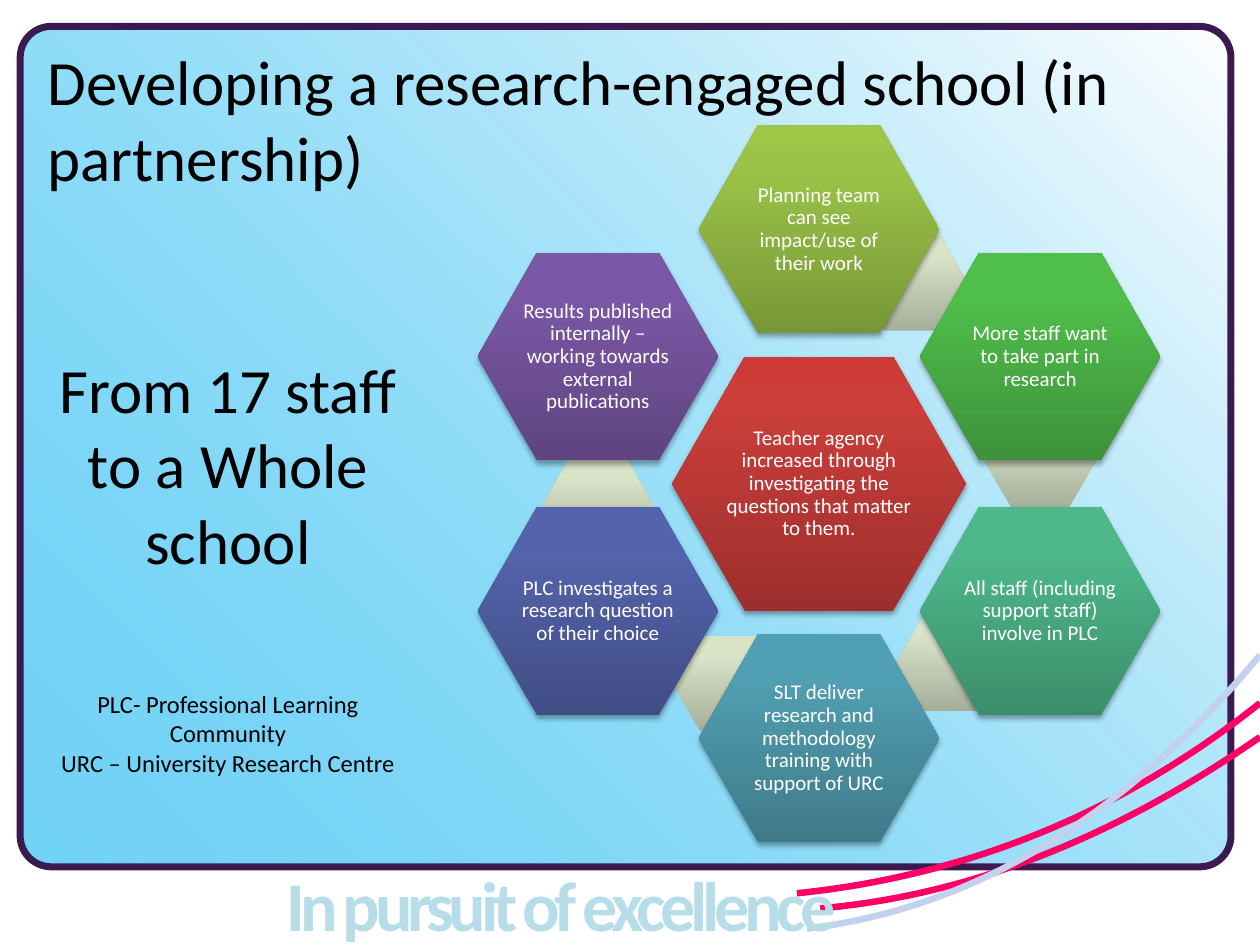
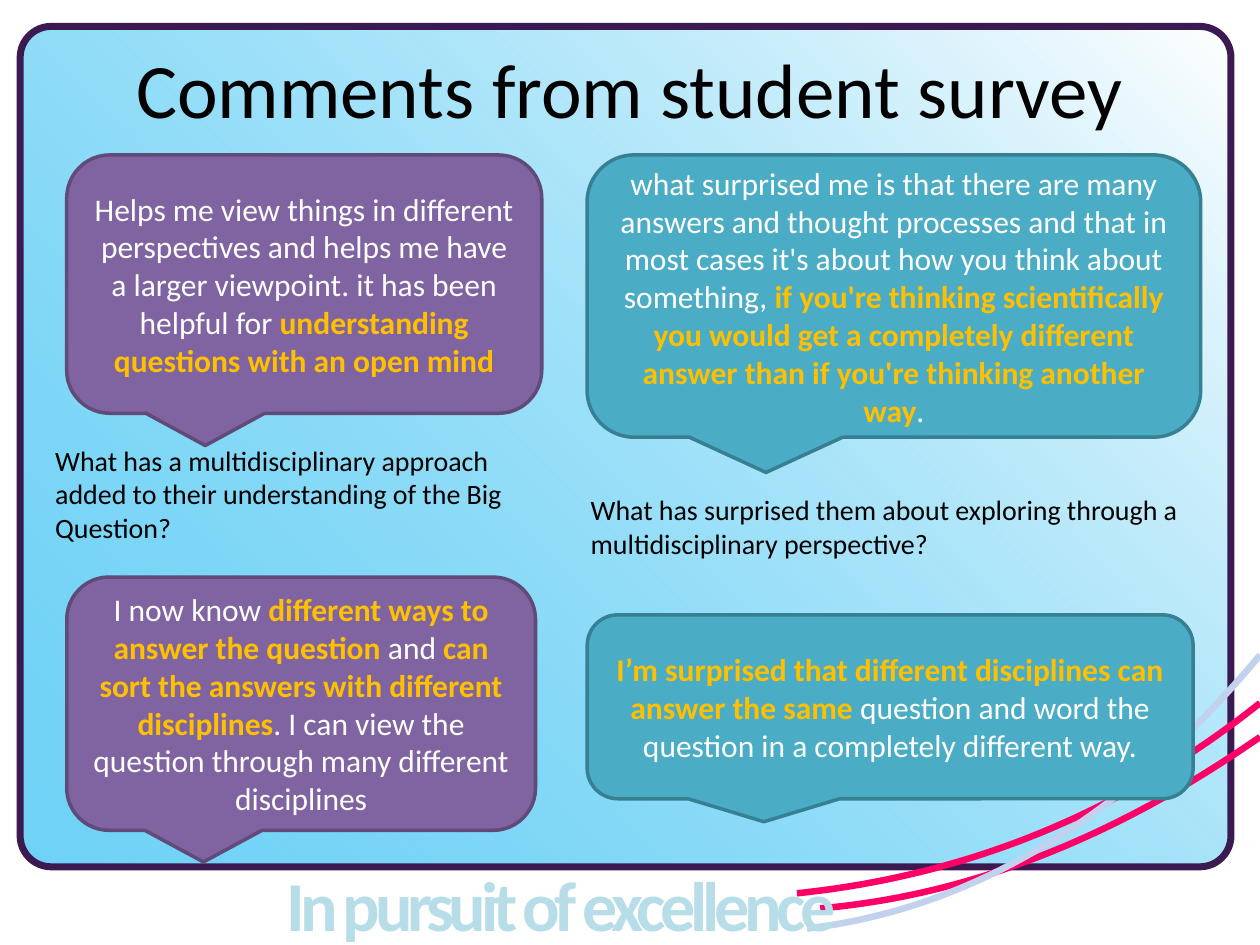
from dataclasses import dataclass

from pptx import Presentation
from pptx.dml.color import RGBColor
from pptx.enum.shapes import MSO_SHAPE
from pptx.enum.text import MSO_ANCHOR, PP_ALIGN
from pptx.oxml import parse_xml
from pptx.oxml.ns import nsdecls, qn
from pptx.presentation import Presentation as Deck
from pptx.shapes.autoshape import Shape
from pptx.slide import Slide
from pptx.util import Emu, Inches, Pt


@dataclass(frozen=True)
class Theme:
    font: str = "Calibri"
    ink: str = "000000"
    paper: str = "FFFFFF"
    highlight: str = "FFC000"
    sky: str = "00B0F0"
    frame: str = "3A1A50"
    pink: str = "FF0066"
    pale_blue: str = "C2D1ED"
    motto: str = "B7DEE8"
    purple: str = "8064A2"
    purple_edge: str = "5F4A78"
    teal: str = "4BACC6"
    teal_edge: str = "377F92"
    motto_size: float = 40
    title_size: float = 44
    heading_size: float = 36
    quote_size: float = 18
    question_size: float = 16
    note_size: float = 14
    hexagon_size: float = 12


@dataclass(frozen=True)
class Box:
    column: float
    row: float
    columns: float
    rows: float


@dataclass(frozen=True)
class Piece:
    text: str
    color: str
    bold: bool = False


@dataclass(frozen=True)
class Hexagon:
    text: str
    across: float
    down: float
    dark: str
    middle: str
    light: str
    columns: float = 19.1
    rows: float = 16.5


@dataclass(frozen=True)
class Callout:
    box: Box
    fill: str
    edge: str
    pieces: tuple[Piece, ...]


@dataclass(frozen=True)
class Swoosh:
    start: tuple[float, float]
    bend: tuple[float, float]
    end: tuple[float, float]
    color: str


THEME = Theme()
WIDTH, HEIGHT = Inches(10), Inches(7.5)
COLUMN, ROW = WIDTH // 100, HEIGHT // 75
RING_CENTER = (65, 38.4)
RING_STEP = (17.55, 10.1)
CURVE_STEPS = 40

SWOOSHES = (
    Swoosh((63.25, 70.9), (83.65, 68.8), (100, 55.8), THEME.pink),
    Swoosh((65.1, 72.1), (82.6, 70.6), (100, 58.5), THEME.pink),
    Swoosh((64.05, 73.7), (83.9, 71.3), (100, 52), THEME.pale_blue),
)

LINK_OFFSETS = ((0.42, -1.58), (1, -0.18), (0.6, 1.41), (-0.41, 1.57), (-1, 0.17))

HEXAGONS = (
    Hexagon("Teacher agency increased through investigating the questions that matter to them.",
            0, 0, "9C2F2D", "CB3E3A", "CE3B37", 23.3, 20.2),
    Hexagon("Planning team can see impact/use of their work",
            0, -2, "779737", "9BC348", "9DC746"),
    Hexagon("More staff want to take part in research",
            1, -1, "3E923A", "50BE4B", "4FC149"),
    Hexagon("All staff (including support staff) involve in PLC",
            1, 1, "3C8E6B", "4EB88B", "4CBB8C"),
    Hexagon("SLT deliver research and methodology training with support of URC",
            0, 2, "3F7A89", "519FB2", "50A0B5"),
    Hexagon("PLC investigates a research question of their choice",
            -1, 1, "414D85", "5464AC", "5363AF"),
    Hexagon("Results published internally – working towards external publications",
            -1, -1, "5F4480", "7B58A6", "7C57A8"),
)


def plain(text: str) -> Piece:
    return Piece(text, THEME.paper)


def strong(text: str) -> Piece:
    return Piece(text, THEME.highlight, True)


CALLOUTS = (
    Callout(Box(5.3, 12.3, 37.7, 20.5), THEME.purple, THEME.purple_edge, (
        plain("Helps me view things in different perspectives and helps me have a larger "
              "viewpoint. it has been helpful for "),
        strong("understanding questions with an open mind"))),
    Callout(Box(5.3, 45.8, 37.2, 20.1), THEME.purple, THEME.purple_edge, (
        plain("I now know "),
        strong("different ways to answer the question "),
        plain("and "),
        strong("can sort the answers with different disciplines"),
        plain(". I can view the question through many different disciplines"))),
    Callout(Box(46.6, 48.8, 48.1, 14.6), THEME.teal, THEME.teal_edge, (
        strong("I’m surprised that different disciplines can answer the same "),
        plain("question and word the question in a completely different way."))),
    Callout(Box(46.6, 12.3, 48.7, 22.4), THEME.teal, THEME.teal_edge, (
        plain("what surprised me is that there are many answers and thought processes and that "
              "in most cases it's about how you think about something, "),
        strong("if you're thinking scientifically you would get a completely different answer "
               "than if you're thinking another way"),
        plain("."))),
)

QUESTIONS = (
    (Box(3.4, 34.7, 41.4, 9.1),
     "What has a multidisciplinary approach added to their understanding of the Big Question?"),
    (Box(45.9, 38.6, 49.6, 6.4),
     "What has surprised them about exploring through a multidisciplinary perspective?"),
)


def place(box: Box) -> tuple[Emu, Emu, Emu, Emu]:
    return (Emu(round(box.column * COLUMN)), Emu(round(box.row * ROW)),
            Emu(round(box.columns * COLUMN)), Emu(round(box.rows * ROW)))


def style_text(shape: Shape, size: float, color: str, align: PP_ALIGN) -> None:
    for paragraph in shape.text_frame.paragraphs:
        paragraph.alignment = align
        for run in paragraph.runs:
            run.font.name = THEME.font
            run.font.size = Pt(size)
            run.font.color.rgb = RGBColor.from_string(color)


def add_text(slide: Slide, box: Box, text: str, size: float, color: str = THEME.ink,
             align: PP_ALIGN = PP_ALIGN.LEFT, anchor: MSO_ANCHOR = MSO_ANCHOR.TOP) -> Shape:
    shape = slide.shapes.add_textbox(*place(box))
    shape.text_frame.word_wrap = True
    shape.text_frame.vertical_anchor = anchor
    shape.text_frame.text = text
    style_text(shape, size, color, align)
    return shape


def add_preset(slide: Slide, kind: MSO_SHAPE, box: Box) -> Shape:
    shape = slide.shapes.add_shape(kind, *place(box))
    shape.shadow.inherit = False
    shape.line.fill.background()
    shape.text_frame.vertical_anchor = MSO_ANCHOR.MIDDLE
    return shape


def set_line(shape: Shape, color: str, width: float) -> None:
    shape.line.color.rgb = RGBColor.from_string(color)
    shape.line.width = Pt(width)


def set_gradient(shape: Shape, stops: str, direction: str) -> None:
    shape.fill.background()
    properties = shape.element.spPr
    gradient = parse_xml(
        f'<a:gradFill {nsdecls("a")} rotWithShape="1"><a:gsLst>{stops}</a:gsLst>'
        f'{direction}</a:gradFill>')
    properties.replace(properties.find(qn("a:noFill")), gradient)


def set_upward_gradient(shape: Shape, dark: str, middle: str, light: str) -> None:
    stops = "".join(
        f'<a:gs pos="{position * 1000}"><a:srgbClr val="{color}"/></a:gs>'
        for position, color in ((0, dark), (80, middle), (100, light)))
    set_gradient(shape, stops, '<a:lin ang="16200000" scaled="0"/>')


def add_shadow(shape: Shape) -> None:
    shape.element.spPr.find(qn("a:effectLst")).append(parse_xml(
        f'<a:outerShdw {nsdecls("a")} blurRad="{Pt(3.1)}" dist="{Pt(1.8)}" dir="5400000" '
        'rotWithShape="0"><a:srgbClr val="000000"><a:alpha val="35000"/></a:srgbClr>'
        '</a:outerShdw>'))


def add_swoosh(slide: Slide, swoosh: Swoosh) -> None:
    points = []
    for step in range(CURVE_STEPS + 1):
        share = step / CURVE_STEPS
        weights = ((1 - share) ** 2, 2 * share * (1 - share), share ** 2)
        column, row = (
            sum(weight * value for weight, value in zip(weights, values))
            for values in zip(swoosh.start, swoosh.bend, swoosh.end))
        points.append((round(column * COLUMN), round(row * ROW)))
    builder = slide.shapes.build_freeform(*points[0])
    builder.add_line_segments(points[1:], close=False)
    shape = builder.convert_to_shape()
    shape.shadow.inherit = False
    shape.fill.background()
    set_line(shape, swoosh.color, 3.75)


def add_base_slide(presentation: Deck) -> Slide:
    slide = presentation.slides.add_slide(presentation.slide_layouts[6])
    frame = add_preset(slide, MSO_SHAPE.ROUNDED_RECTANGLE, Box(1.6, 2.1, 96.1, 66.7))
    frame.adjustments[0] = 0.037
    set_gradient(
        frame,
        f'<a:gs pos="0"><a:srgbClr val="{THEME.sky}"><a:alpha val="56000"/></a:srgbClr></a:gs>'
        f'<a:gs pos="100000"><a:srgbClr val="{THEME.paper}"/></a:gs>',
        '<a:path path="circle"><a:fillToRect t="100000" r="100000"/></a:path>')
    set_line(frame, THEME.frame, 4)
    for swoosh in SWOOSHES:
        add_swoosh(slide, swoosh)
    motto = add_text(slide, Box(21.7, 67.9, 45.7, 7.7), "In pursuit of excellence",
                     THEME.motto_size, THEME.motto, PP_ALIGN.CENTER)
    motto.text_frame.word_wrap = False
    font = motto.text_frame.paragraphs[0].runs[0].font
    font.bold = True
    motto.text_frame.paragraphs[0].runs[0]._r.get_or_add_rPr().set("spc", "-300")
    return slide


def add_hexagon(slide: Slide, across: float, down: float, columns: float, rows: float) -> Shape:
    left = RING_CENTER[0] + across * RING_STEP[0] - columns / 2
    top = RING_CENTER[1] + down * RING_STEP[1] - rows / 2
    shape = add_preset(slide, MSO_SHAPE.HEXAGON, Box(left, top, columns, rows))
    shape.adjustments[0] = 0.286
    return shape


def add_labelled_hexagon(slide: Slide, hexagon: Hexagon) -> None:
    shape = add_hexagon(slide, hexagon.across, hexagon.down, hexagon.columns, hexagon.rows)
    set_upward_gradient(shape, hexagon.dark, hexagon.middle, hexagon.light)
    add_shadow(shape)
    frame = shape.text_frame
    frame.margin_left = frame.margin_right = frame.margin_top = frame.margin_bottom = Inches(0.02)
    frame.text = hexagon.text
    frame.paragraphs[0].line_spacing = 0.9
    style_text(shape, THEME.hexagon_size, THEME.paper, PP_ALIGN.CENTER)


def add_callout(slide: Slide, callout: Callout) -> None:
    shape = add_preset(slide, MSO_SHAPE.ROUNDED_RECTANGULAR_CALLOUT, callout.box)
    shape.fill.solid()
    shape.fill.fore_color.rgb = RGBColor.from_string(callout.fill)
    set_line(shape, callout.edge, 2)
    paragraph = shape.text_frame.paragraphs[0]
    for piece in callout.pieces:
        paragraph.add_run().text = piece.text
    style_text(shape, THEME.quote_size, THEME.paper, PP_ALIGN.CENTER)
    for run, piece in zip(paragraph.runs, callout.pieces):
        run.font.bold = piece.bold
        run.font.color.rgb = RGBColor.from_string(piece.color)


def build_research_slide(presentation: Deck) -> None:
    slide = add_base_slide(presentation)
    summary = add_text(
        slide, Box(2.8, 27.3, 30.6, 36.2),
        "From 17 staff to a Whole school\nPLC- Professional Learning Community\n"
        "URC – University Research Centre",
        THEME.heading_size, align=PP_ALIGN.CENTER)
    notes = summary.text_frame.paragraphs[1:]
    notes[0].space_before = Pt(64)
    for note in notes:
        note.runs[0].font.size = Pt(THEME.note_size)
    for across, down in LINK_OFFSETS:
        link = add_hexagon(slide, across, down, 8.8, 7.6)
        set_upward_gradient(link, "A6AF9A", "D8E3C8", "D9E4C8")
    for hexagon in HEXAGONS:
        add_labelled_hexagon(slide, hexagon)
    add_text(slide, Box(2.8, 2.9, 92.1, 12.8),
             "Developing a research-engaged school (in partnership)", THEME.heading_size)


def build_survey_slide(presentation: Deck) -> None:
    slide = add_base_slide(presentation)
    for callout in CALLOUTS:
        add_callout(slide, callout)
    for box, question in QUESTIONS:
        add_text(slide, box, question, THEME.question_size)
    add_text(slide, Box(1.7, 2.1, 96.6, 9.7), "Comments from student survey",
             THEME.title_size, align=PP_ALIGN.CENTER, anchor=MSO_ANCHOR.MIDDLE)


def main() -> None:
    presentation = Presentation()
    presentation.slide_width, presentation.slide_height = WIDTH, HEIGHT
    build_research_slide(presentation)
    build_survey_slide(presentation)
    presentation.save("out.pptx")


if __name__ == "__main__":
    main()
